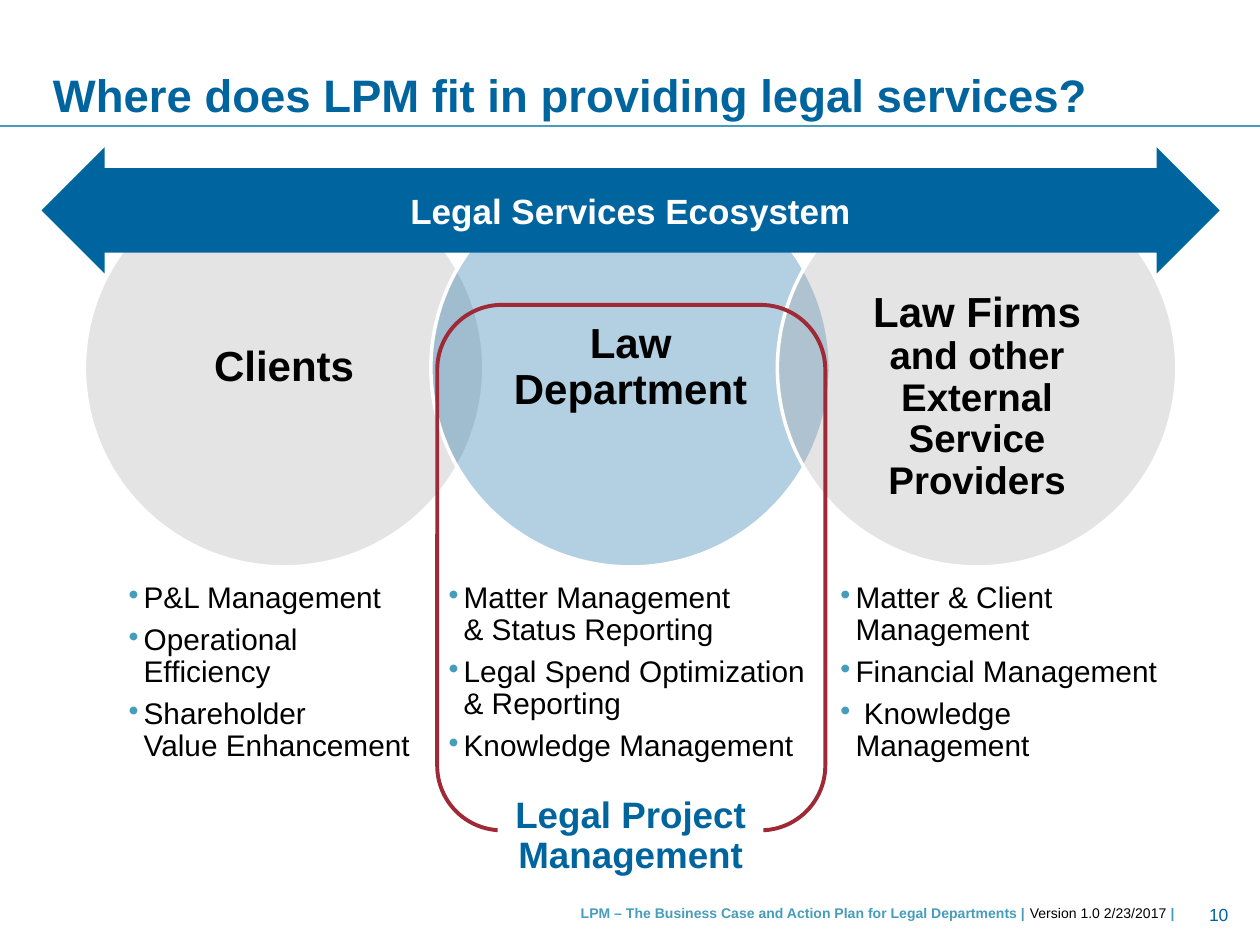
from dataclasses import dataclass

from lxml import etree
from pptx import Presentation
from pptx import util as u
from pptx.dml.color import RGBColor
from pptx.enum import shapes, text
from pptx.oxml.ns import qn


@dataclass(frozen=True)
class Theme:
    font: str = "Arial"
    blue: str = "00659E"
    teal: str = "469DBB"
    grey: str = "A6A6A6"
    red: str = "9F2936"
    black: str = "000000"
    white: str = "FFFFFF"
    title: float = 26
    circle: float = 24
    circle_detail: float = 22
    label: float = 21
    arrow: float = 20
    body: float = 17
    number: float = 10
    footer: float = 8


THEME = Theme()
COLUMNS, ROWS = 100, 75
CELL = u.Inches(0.1)
NO_GRID_STYLE = "{2D5ABB26-0587-4C30-8999-92F81FD0307C}"
CENTER, RIGHT = text.PP_ALIGN.CENTER, text.PP_ALIGN.RIGHT
MIDDLE = text.MSO_ANCHOR.MIDDLE


def grid(*lengths):
    """Turn grid columns and rows into slide lengths."""
    return [round(length * CELL) for length in lengths]


def style(font, size, color, bold=False):
    font.name, font.size, font.bold = THEME.font, u.Pt(size), bold
    font.color.rgb = RGBColor.from_string(color)


def set_frame(frame, anchor, insets, wrap=True):
    frame.word_wrap, frame.vertical_anchor = wrap, anchor
    (frame.margin_left, frame.margin_top,
     frame.margin_right, frame.margin_bottom) = grid(*insets)


def write(para, words, size, color, bold=True, align=None, spacing=1.0):
    para.text = words
    para.alignment, para.line_spacing = align, spacing
    style(para.font, size, color, bold)


def add_text(page, place, anchor=text.MSO_ANCHOR.TOP, insets=(0, 0, 0, 0), wrap=True):
    box = page.shapes.add_textbox(*grid(*place))
    set_frame(box.text_frame, anchor, insets, wrap)
    return box.text_frame.paragraphs[0]


def add_figure(page, kind, place, fill=None, line=None, width=1.0, alpha=None):
    figure = page.shapes.add_shape(kind, *grid(*place))
    figure.shadow.inherit = False
    if fill:
        figure.fill.solid()
        figure.fill.fore_color.rgb = RGBColor.from_string(fill)
    else:
        figure.fill.background()
    if alpha:
        color = figure._element.spPr.find(qn("a:solidFill"))[0]
        etree.SubElement(color, qn("a:alpha"), val=str(alpha * 1000))
    if line:
        figure.line.color.rgb = RGBColor.from_string(line)
        figure.line.width = u.Pt(width)
    else:
        figure.line.fill.background()
    return figure


def add_rule(page, row):
    rule = page.shapes.add_connector(
        shapes.MSO_CONNECTOR.STRAIGHT, *grid(0, row, COLUMNS, row))
    rule.line.color.rgb = RGBColor.from_string(THEME.teal)
    rule.line.width = u.Pt(0.75)
    etree.SubElement(rule._element.spPr, qn("a:effectLst"))


def add_circle(page, index, fill, words, detail=None):
    """Place one of three overlapping circles, with its name inside."""
    place = (6.7 + 27.5 * index, 13.4, 31.7, 31.6)
    circle = add_figure(page, shapes.MSO_SHAPE.OVAL, place, fill, THEME.white, 2, 30)
    top = 4.9 if detail else 0.3
    set_frame(circle.text_frame, MIDDLE, (0, top, 0, 0.3))
    para = circle.text_frame.paragraphs[0]
    write(para, words, THEME.circle, THEME.black, align=CENTER, spacing=0.9)
    if detail:
        para.add_line_break()
        span = para.add_run()
        span.text = detail
        span.font.size = u.Pt(THEME.circle_detail)


def add_bullet(para, words):
    props = para._p.get_or_add_pPr()
    indent = u.Inches(0.12)
    props.set("marL", str(indent))
    props.set("indent", str(-indent))
    color = etree.SubElement(props, qn("a:buClr"))
    etree.SubElement(color, qn("a:srgbClr"), val=THEME.teal)
    etree.SubElement(props, qn("a:buChar"), char="•")
    write(para, words, THEME.body, THEME.black, bold=False, spacing=0.95)
    para.space_after = u.Pt(6)


def add_lists(page, place, widths, lists):
    table = page.shapes.add_table(1, len(lists), *grid(*place)).table
    table.first_row = table.horz_banding = False
    table._tbl.tblPr.find(qn("a:tableStyleId")).text = NO_GRID_STYLE
    for column, width, cell, items in zip(
            table.columns, grid(*widths), table.rows[0].cells, lists):
        column.width = width
        cell.fill.background()
        for number, words in enumerate(items):
            frame = cell.text_frame
            add_bullet(frame.add_paragraph() if number else frame.paragraphs[0], words)


def add_footer(page):
    number = add_text(page, (95.8, 71.7, 1.7, 1.7), MIDDLE, wrap=False)
    write(number, "10", THEME.number, THEME.blue, bold=False, align=RIGHT)
    para = add_text(page, (39.2, 71.3, 55, 2.4), insets=(1, 0.5, 1, 0.5))
    para.alignment = RIGHT
    for words, color, bold in (
            ("LPM – The Business Case and Action Plan for Legal Departments |",
             THEME.teal, True),
            (" Version 1.0 2/23/2017 ", THEME.black, False),
            ("|", THEME.teal, True)):
        span = para.add_run()
        span.text = words
        style(span.font, THEME.footer, color, bold)


def main():
    deck = Presentation()
    deck.slide_width, deck.slide_height = grid(COLUMNS, ROWS)
    page = deck.slides.add_slide(deck.slide_layouts[6])

    # Footer and title rule
    add_footer(page)
    add_rule(page, 10)

    # Overlapping circles
    add_circle(page, 0, THEME.grey, "Clients")
    add_circle(page, 1, THEME.blue, "Law Department")
    add_circle(page, 2, THEME.grey, "Law Firms", "and other External Service Providers")

    # Ecosystem arrow
    arrow = add_figure(page, shapes.MSO_SHAPE.LEFT_RIGHT_ARROW,
                       (3.3, 11.7, 93.5, 10), THEME.blue)
    arrow.adjustments[0], arrow.adjustments[1] = 0.67, 0.5
    set_frame(arrow.text_frame, MIDDLE, (1, 0.5, 1, 0.5))
    write(arrow.text_frame.paragraphs[0], "Legal Services Ecosystem",
          THEME.arrow, THEME.white, align=CENTER)

    # Title
    title = add_text(page, (4.2, 0.6, 95.8, 9.1), text.MSO_ANCHOR.BOTTOM)
    write(title, "Where does LPM fit in providing legal services?",
          THEME.title, THEME.blue, spacing=0.9)

    # Project management frame and the lists below the circles
    add_figure(page, shapes.MSO_SHAPE.ROUNDED_RECTANGLE,
               (34.7, 24.2, 30.8, 41.7), line=THEME.red, width=2.25)
    add_lists(page, (9.2, 45.8, 87.7, 16.1), (25.4, 31.1, 31.1), (
        ("P&L Management", "Operational\vEfficiency",
         "Shareholder\vValue Enhancement"),
        ("Matter Management\v& Status Reporting",
         "Legal Spend Optimization\v& Reporting", "Knowledge Management"),
        ("Matter & Client Management", "Financial Management",
         " Knowledge\vManagement")))

    # Frame label
    label = add_figure(page, shapes.MSO_SHAPE.RECTANGLE,
                       (39.5, 63.2, 21.1, 6.4), THEME.white)
    set_frame(label.text_frame, MIDDLE, (1, 0, 1, 0))
    write(label.text_frame.paragraphs[0], "Legal Project Management",
          THEME.label, THEME.blue, align=CENTER, spacing=0.9)

    deck.save("out.pptx")


if __name__ == "__main__":
    main()
